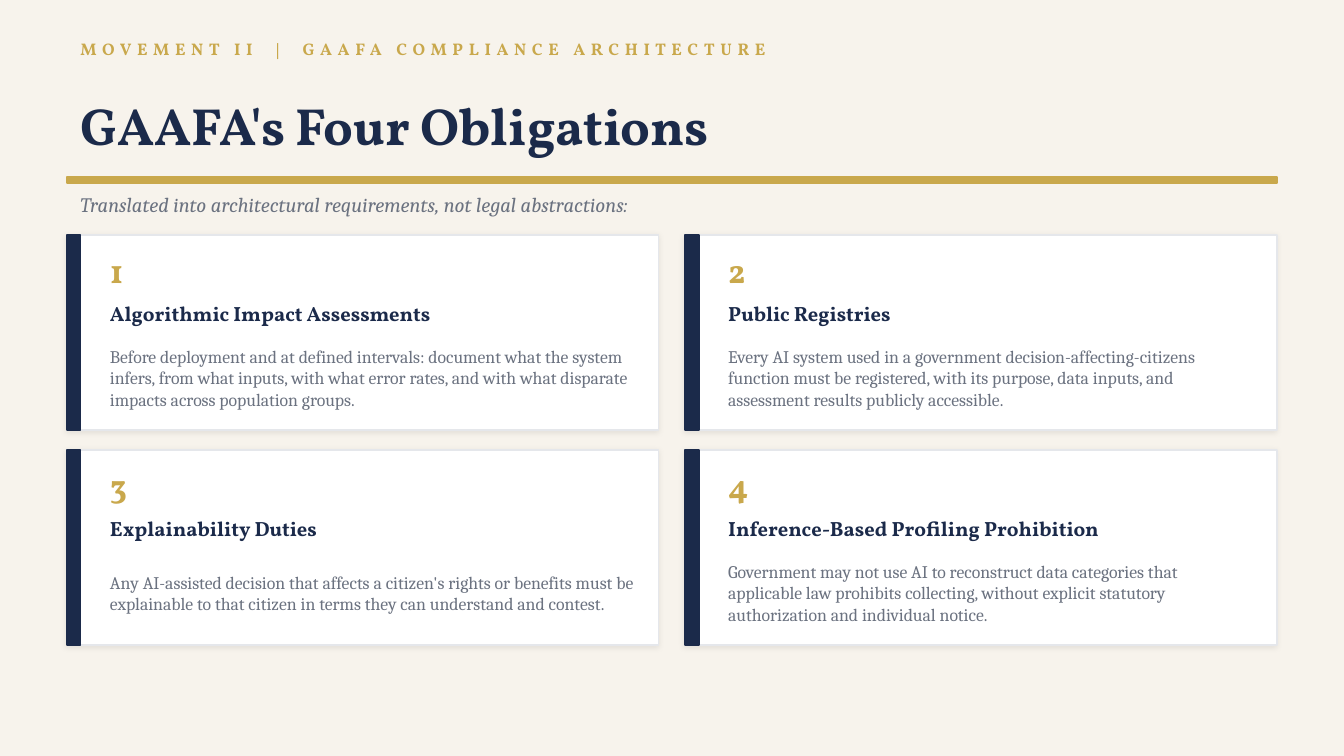
from dataclasses import dataclass

from lxml import etree
from pptx import Presentation
from pptx.dml.color import RGBColor
from pptx.enum.shapes import MSO_SHAPE
from pptx.enum.text import MSO_ANCHOR, MSO_AUTO_SIZE, PP_ALIGN
from pptx.oxml.ns import qn
from pptx.util import Pt

RECTANGLE = MSO_SHAPE.RECTANGLE
MIDDLE = MSO_ANCHOR.MIDDLE
NO_AUTOFIT = MSO_AUTO_SIZE.NONE
LEFT = PP_ALIGN.LEFT
TITLE_ONLY = 5
EMU_PER_PX = 4572


@dataclass(frozen=True)
class Theme:
    paper: str = "F7F3EC"
    white: str = "FFFFFF"
    navy: str = "1B2A4A"
    gold: str = "C9A84C"
    gray: str = "6B7280"
    border: str = "E5E7EB"
    shadow: str = "000000"
    display: str = "Vollkorn"
    body: str = "Cambria"
    kicker_size: float = 9
    title_size: float = 28
    lead_size: float = 11
    number_size: float = 18
    heading_size: float = 11
    body_size: float = 9.5


THEME = Theme()

OBLIGATIONS = [
    ("Algorithmic Impact Assessments",
     "Before deployment and at defined intervals: document what the system infers, "
     "from what inputs, with what error rates, and with what disparate impacts "
     "across population groups."),
    ("Public Registries",
     "Every AI system used in a government decision-affecting-citizens function must "
     "be registered, with its purpose, data inputs, and assessment results publicly "
     "accessible."),
    ("Explainability Duties",
     "Any AI-assisted decision that affects a citizen's rights or benefits must be "
     "explainable to that citizen in terms they can understand and contest."),
    ("Inference-Based Profiling Prohibition",
     "Government may not use AI to reconstruct data categories that applicable law "
     "prohibits collecting, without explicit statutory authorization and individual "
     "notice."),
]


def px(*lengths):
    return [length * EMU_PER_PX for length in lengths]


def write(slide, box, text, *, size, color, font=THEME.display, bold=False,
          italic=False, spacing=0, holder=None):
    if holder is None:
        holder = slide.shapes.add_textbox(*px(*box))
    else:
        holder.left, holder.top, holder.width, holder.height = px(*box)
    frame = holder.text_frame
    frame.word_wrap = True
    frame.auto_size = NO_AUTOFIT
    frame.vertical_anchor = MIDDLE
    paragraph = frame.paragraphs[0]
    paragraph.alignment = LEFT
    run = paragraph.add_run()
    run.text = text
    run.font.name = font
    run.font.size = Pt(size)
    run.font.bold = bold
    run.font.italic = italic
    run.font.color.rgb = RGBColor.from_string(color)
    if spacing:
        run.font._element.set("spc", str(spacing * 100))


def add_panel(slide, box, fill, line):
    panel = slide.shapes.add_shape(RECTANGLE, *px(*box))
    panel.fill.solid()
    panel.fill.fore_color.rgb = RGBColor.from_string(fill)
    panel.line.color.rgb = RGBColor.from_string(line)
    panel.line.width = Pt(1)
    panel.shadow.inherit = False
    return panel


def cast_shadow(panel):
    effects = panel._element.spPr.find(qn("a:effectLst"))
    shadow = etree.SubElement(effects, qn("a:outerShdw"), blurRad=str(Pt(3)),
                              dist=str(Pt(1)), dir=str(135 * 60000),
                              algn="bl", rotWithShape="0")
    color = etree.SubElement(shadow, qn("a:srgbClr"), val=THEME.shadow)
    etree.SubElement(color, qn("a:alpha"), val="8000")


def add_header(slide, left, top, width):
    write(slide, (left, top, width, 56),
          "MOVEMENT II  |  GAAFA COMPLIANCE ARCHITECTURE",
          size=THEME.kicker_size, color=THEME.gold, bold=True, spacing=3)
    write(slide, (left, top + 66, width, 150), "GAAFA's Four Obligations",
          size=THEME.title_size, color=THEME.navy, bold=True,
          holder=slide.shapes.title)
    add_panel(slide, (left, top + 220, width, 8), THEME.gold, THEME.gold)
    write(slide, (left, top + 232, width, 56),
          "Translated into architectural requirements, not legal abstractions:",
          size=THEME.lead_size, color=THEME.gray, font=THEME.body, italic=True)


def add_card(slide, box, number, heading, duty):
    left, top, width, height = box
    cast_shadow(add_panel(slide, box, THEME.white, THEME.border))
    add_panel(slide, (left, top, 20, height), THEME.navy, THEME.navy)
    text_left, text_width = left + 44, width - 60
    write(slide, (text_left, top + 20, 80, 64), str(number),
          size=THEME.number_size, color=THEME.gold, bold=True)
    write(slide, (text_left, top + 86, text_width, 60), heading,
          size=THEME.heading_size, color=THEME.navy, bold=True)
    write(slide, (text_left, top + 150, text_width, 124), duty,
          size=THEME.body_size, color=THEME.gray, font=THEME.body)


def add_card_grid(slide, box, columns=2, rows=2, column_gap=40, row_gap=30):
    left, top, width, height = box
    card_width = (width - column_gap * (columns - 1)) // columns
    card_height = (height - row_gap * (rows - 1)) // rows
    for index, (heading, duty) in enumerate(OBLIGATIONS):
        row, column = divmod(index, columns)
        card = (left + column * (card_width + column_gap),
                top + row * (card_height + row_gap), card_width, card_height)
        add_card(slide, card, index + 1, heading, duty)


def main():
    deck = Presentation()
    deck.slide_width, deck.slide_height = px(2000, 1125)
    slide = deck.slides.add_slide(deck.slide_layouts[TITLE_ONLY])
    slide.background.fill.solid()
    slide.background.fill.fore_color.rgb = RGBColor.from_string(THEME.paper)
    add_header(slide, 100, 44, 1800)
    add_card_grid(slide, (100, 350, 1800, 610))
    deck.save("out.pptx")


if __name__ == "__main__":
    main()
